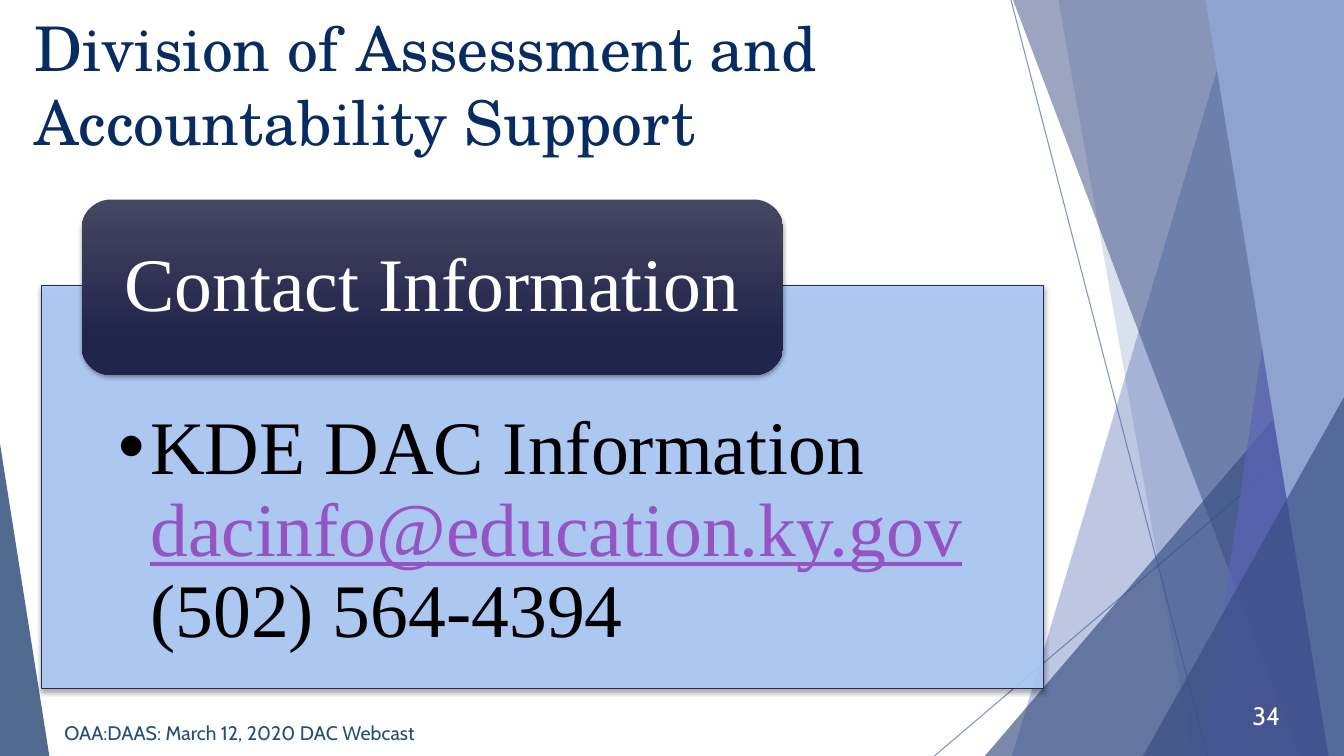
from dataclasses import dataclass
from typing import Any

from lxml.etree import SubElement
from pptx import Presentation
from pptx.dml.color import RGBColor
from pptx.enum.shapes import MSO_CONNECTOR, MSO_SHAPE
from pptx.enum.text import MSO_ANCHOR, MSO_AUTO_SIZE, PP_ALIGN
from pptx.oxml.ns import qn
from pptx.util import Inches, Pt

WIDTH, HEIGHT = Inches(13.33), Inches(7.5)
COLUMNS, ROWS = 40, 22.5
NAVY, ROYAL, STEEL = "072C62", "4A66AC", "384C81"
SERIF, SANS, SCHOOL = "Times New Roman", "Cabin", "TeX Gyre Schola"


@dataclass(frozen=True)
class Area:
    left: float
    top: float
    width: float
    height: float


@dataclass(frozen=True)
class Ray:
    start: tuple[float, float]
    end: tuple[float, float]


@dataclass(frozen=True)
class Facet:
    top: float
    bottom: float
    colour: str
    opacity: int


@dataclass(frozen=True)
class Wedge:
    area: Area
    apex: int
    colour: str
    opacity: int


@dataclass(frozen=True)
class Phrase:
    text: str
    colour: str
    size: int
    face: str
    underline: bool = False


RAYS = (Ray((30.09, 0), (35.94, ROWS)), Ray((COLUMNS, 12.12), (27.81, ROWS)))
CRYSTAL = (
    Facet(36.84, 30.12, ROYAL, 36),
    Facet(31.5, 35.49, ROYAL, 20),
    Wedge(Area(29.31, 10.02, 10.69, 12.48), 1, STEEL, 66),
    Facet(30.15, 38.67, STEEL, 50),
    Facet(39.09, 35.76, "5C64B7", 70),
    Facet(35.88, 39.54, "90A2CF", 100),
    Wedge(Area(34.02, 11.82, 5.98, 10.68), 1, STEEL, 66),
    Wedge(Area(0, 13.2, 1.47, 9.3), 0, NAVY, 70),
)


def column(count: float) -> int:
    """Convert grid columns to a length."""
    return round(WIDTH * count / COLUMNS)


def row(count: float) -> int:
    """Convert grid rows to a length."""
    return round(HEIGHT * count / ROWS)


def box(area: Area) -> tuple[int, int, int, int]:
    """Give the left, top, width and height of an area."""
    return column(area.left), row(area.top), column(area.width), row(area.height)


def rgb(colour: str) -> RGBColor:
    """Read a hex colour."""
    return RGBColor.from_string(colour)


def apply(target: Any, formats: dict[str, Any]) -> None:
    """Set each named format on the target."""
    for name, value in formats.items():
        setattr(target, name, value)


def fade(shape: Any, opacity: int) -> None:
    """Make the first colour of a shape translucent."""
    if opacity < 100:
        tint = shape.element.xpath("./p:spPr//a:srgbClr")[0]
        SubElement(tint, qn("a:alpha"), val=str(opacity * 1000))


def paint(shape: Any, colour: str, opacity: int) -> None:
    """Fill a shape with one colour and no outline."""
    shape.shadow.inherit = False
    shape.fill.solid()
    shape.fill.fore_color.rgb = rgb(colour)
    shape.line.fill.background()
    fade(shape, opacity)


def cast_shadow(shape: Any) -> None:
    """Drop a soft shadow below a shape."""
    shape.shadow.inherit = False
    effects = shape.element.spPr.find(qn("a:effectLst"))
    shade = SubElement(effects, qn("a:outerShdw"), blurRad=str(Pt(3)), dist=str(Pt(2)),
                       dir="5400000", rotWithShape="0")
    black = SubElement(shade, qn("a:srgbClr"), val="000000")
    SubElement(black, qn("a:alpha"), val="35000")


def draw_ray(slide: Any, ray: Ray) -> None:
    """Draw a thin line across the decoration."""
    (x1, y1), (x2, y2) = ray.start, ray.end
    line = slide.shapes.add_connector(MSO_CONNECTOR.STRAIGHT, column(x1), row(y1), column(x2), row(y2))
    line.line.color.rgb = rgb(ROYAL)
    line.line.width = Pt(0.75)
    fade(line, 70)
    SubElement(line.element.spPr, qn("a:effectLst"))


def draw_facet(slide: Any, facet: Facet) -> None:
    """Draw a slanted panel that reaches the right edge."""
    outline = slide.shapes.build_freeform(column(facet.top), 0, scale=1.0)
    outline.add_line_segments([(WIDTH, 0), (WIDTH, HEIGHT), (column(facet.bottom), HEIGHT)], close=True)
    paint(outline.convert_to_shape(), facet.colour, facet.opacity)


def draw_wedge(slide: Any, wedge: Wedge) -> None:
    """Draw a right-angled triangle."""
    triangle = slide.shapes.add_shape(MSO_SHAPE.ISOSCELES_TRIANGLE, *box(wedge.area))
    triangle.adjustments[0] = wedge.apex
    paint(triangle, wedge.colour, wedge.opacity)


def write(shape: Any, phrases: list[Phrase], frame_formats: dict[str, Any],
          paragraph_formats: dict[str, Any]) -> None:
    """Write one paragraph of phrases into a shape."""
    apply(shape.text_frame, {"word_wrap": True, "auto_size": MSO_AUTO_SIZE.NONE, **frame_formats})
    paragraph = shape.text_frame.paragraphs[0]
    apply(paragraph, {"alignment": PP_ALIGN.LEFT, "space_before": Pt(0), **paragraph_formats})
    for phrase in phrases:
        run = paragraph.add_run()
        run.text = phrase.text
        apply(run.font, {"name": phrase.face, "size": Pt(phrase.size), "underline": phrase.underline})
        run.font.color.rgb = rgb(phrase.colour)


def place(shape: Any, area: Area) -> None:
    """Move a placeholder to an area."""
    apply(shape, dict(zip(("left", "top", "width", "height"), box(area))))


def draw_contact(slide: Any, details: Any) -> None:
    """Draw the contact panel and its heading."""
    place(details, Area(1.23, 8.49, 29.82, 12))
    paint(details, "ACCBF9", 90)
    details.line.color.rgb = rgb("242852")
    details.line.width = Pt(1)
    cast_shadow(details)
    properties = details.text_frame.paragraphs[0]._p.get_or_add_pPr()
    apply_indent = {"marL": Inches(0.31), "indent": -Inches(0.31)}
    for name, length in apply_indent.items():
        properties.set(name, str(length))
    SubElement(properties, qn("a:buChar"), char="•")
    write(details, [
        Phrase("KDE DAC Information ", "000000", 54, SERIF),
        Phrase("dacinfo@education.ky.gov", "9454C3", 54, SERIF, True),
        Phrase(" (502) 564-4394", "000000", 54, SERIF),
    ], {"margin_left": Inches(0.77), "margin_right": Inches(0.77), "margin_top": Inches(1.23),
        "margin_bottom": Inches(0.42), "vertical_anchor": MSO_ANCHOR.TOP}, {"line_spacing": 0.9})
    slide.shapes._spTree.append(details.element)

    heading = slide.shapes.add_shape(MSO_SHAPE.ROUNDED_RECTANGLE, *box(Area(2.43, 5.94, 20.88, 5.22)))
    heading.fill.gradient()
    heading.fill.gradient_angle = 270
    for stop, (position, colour) in zip(heading.fill.gradient_stops, ((0, "464762"), (0.78, "21254B"))):
        stop.position = position
        stop.color.rgb = rgb(colour)
    heading.line.fill.background()
    cast_shadow(heading)
    write(heading, [Phrase("Contact Information", "FFFFFF", 54, SERIF)],
          {"margin_left": Inches(0.34), "margin_right": Inches(0.34), "margin_top": 0,
           "margin_bottom": 0, "vertical_anchor": MSO_ANCHOR.MIDDLE}, {"line_spacing": 0.9})


def main() -> None:
    """Build and save the slide."""
    deck = Presentation()
    apply(deck, {"slide_width": WIDTH, "slide_height": HEIGHT})
    slide = deck.slides.add_slide(deck.slide_layouts[1])
    title, details = slide.placeholders
    for ray in RAYS:
        draw_ray(slide, ray)
    for piece in CRYSTAL:
        if isinstance(piece, Facet):
            draw_facet(slide, piece)
        else:
            draw_wedge(slide, piece)
    draw_contact(slide, details)
    place(title, Area(0.72, 0.15, 32.43, 2.94))
    write(title, [Phrase("Division of Assessment and Accountability Support", NAVY, 44, SCHOOL)],
          {"vertical_anchor": MSO_ANCHOR.TOP}, {})
    for area, phrase, alignment in (
        (Area(1.62, 21.21, 13.5, 1.2),
         Phrase("OAA:DAAS: March 12, 2020 DAC Webcast", "234F77", 14, SANS), PP_ALIGN.LEFT),
        (Area(36.15, 20.7, 2.25, 1.2), Phrase("34", "FFFFFF", 18, SANS), PP_ALIGN.RIGHT),
    ):
        write(slide.shapes.add_textbox(*box(area)), [phrase],
              {"vertical_anchor": MSO_ANCHOR.MIDDLE}, {"alignment": alignment})
    deck.save("out.pptx")


if __name__ == "__main__":
    main()
